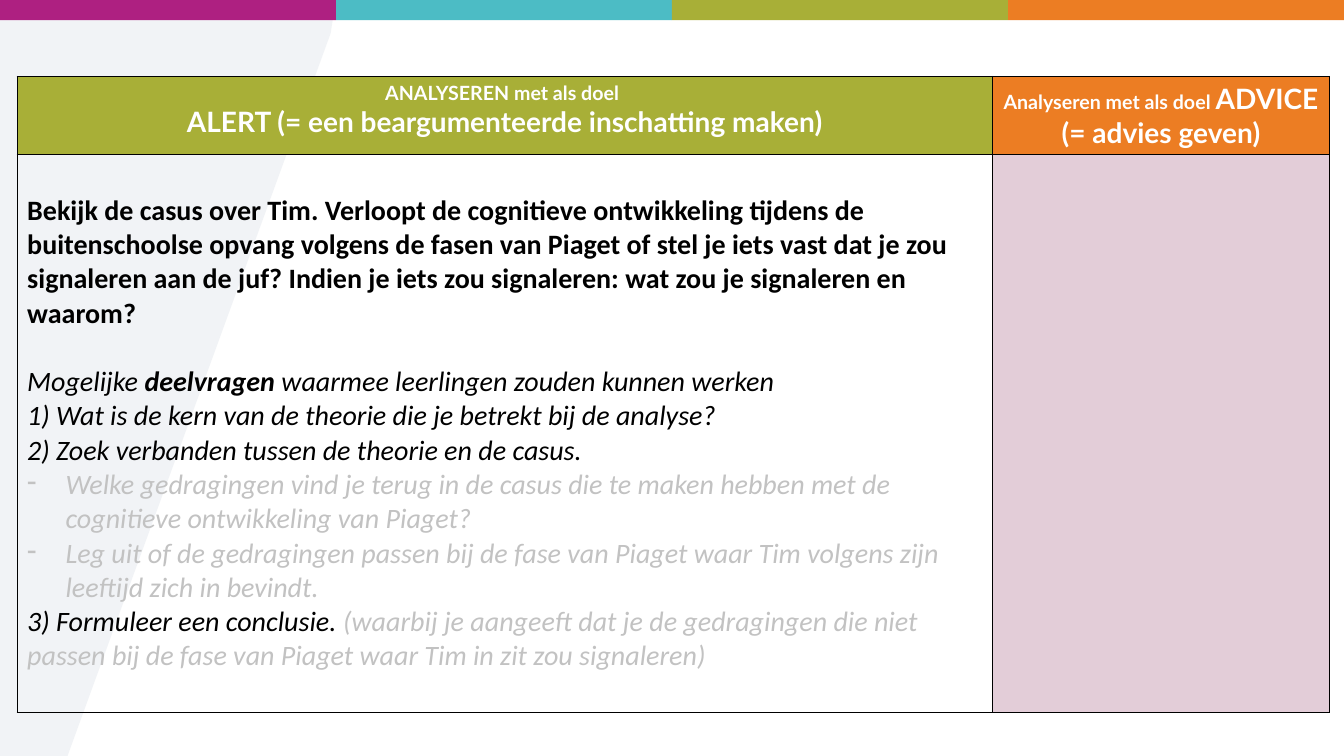
from lxml import etree
from pptx import Presentation
from pptx.dml.color import RGBColor
from pptx.enum.text import PP_ALIGN
from pptx.oxml.ns import qn
from pptx.util import Inches, Pt

CENTER = PP_ALIGN.CENTER
PINK, TEAL, GREEN, ORANGE = "AE2081", "4CBCC5", "A8AF37", "EC7D23"
GREY, BLACK, WHITE, ROSE = "C2C2C2", "000000", "FFFFFF", "E3CDD8"


def paint(fill, color):
    fill.solid()
    fill.fore_color.rgb = RGBColor.from_string(color)


prs = Presentation()
prs.slide_width, prs.slide_height = Inches(13.33), Inches(7.5)
slide = prs.slides.add_slide(prs.slide_layouts[6])
shapes = slide.shapes

# Pale slanted panel
edge = [(3.28, 0.33), (3.3, 0.2), (3.25, 0.1), (3.09, 0.05), (0, 0.05), (0, 7.5)]
pen = shapes.build_freeform(Inches(0.67), Inches(7.5))
pen.add_line_segments([(Inches(x), Inches(y)) for x, y in edge], close=True)
panel = pen.convert_to_shape()
panel.shadow.inherit = False
paint(panel.fill, "E8ECF0")
panel.line.fill.background()
tint = panel.fill._xPr.find(qn("a:solidFill"))[0]
etree.SubElement(tint, qn("a:alpha"), val="59000")

# Four colour bars along the top
bar_w = prs.slide_width // 4
for i, color in enumerate((PINK, TEAL, GREEN, ORANGE)):
    bar = shapes.add_shape(1, i * bar_w, 0, bar_w, Inches(0.2))
    bar.shadow.inherit = False
    paint(bar.fill, color)
    bar.line.fill.background()

# Table grid
table = shapes.add_table(2, 2, Inches(0.17), Inches(0.76),
                         Inches(13.02), Inches(6.31)).table
table.first_row = table.horz_banding = False
for col, width in zip(table.columns, (9.67, 3.35)):
    col.width = Inches(width)
for row, height in zip(table.rows, (0.77, 5.54)):
    row.height = Inches(height)
for cell, color in zip(table.iter_cells(), (GREEN, ORANGE, None, ROSE)):
    props = cell._tc.get_or_add_tcPr()
    for side in ("lnL", "lnR", "lnT", "lnB"):
        line = etree.SubElement(props, qn("a:" + side), w="12700")
        ink = etree.SubElement(line, qn("a:solidFill"))
        etree.SubElement(ink, qn("a:srgbClr"), val=BLACK)
    if color:
        paint(cell.fill, color)
    else:
        cell.fill.background()

# Headings: small lead-in, large goal
heads = [
    ("ANALYSEREN met als doel \v", "ALERT (= een beargumenteerde inschatting maken)"),
    ("Analyseren met als doel ", "ADVICE (= advies geven)"),
]
for col, parts in enumerate(heads):
    para = table.cell(0, col).text_frame.paragraphs[0]
    para.alignment = CENTER
    para.font.name, para.font.bold = "Lato", True
    para.font.color.rgb = RGBColor.from_string(WHITE)
    for text, size in zip(parts, (14, 20)):
        lead, *rest = text.split("\v")
        run = para.add_run()
        run.text = lead
        run.font.size = Pt(size)
        if rest:
            para.add_line_break()

# Body: gap before in points, dash, runs of (text, colour, bold)
body = [
    (0, False, [("Bekijk de casus over Tim. Verloopt de cognitieve ontwikkeling tijdens de "
                 "buitenschoolse opvang volgens de fasen van Piaget of stel je iets vast dat je "
                 "zou signaleren aan de juf? Indien je iets zou signaleren: wat zou je "
                 "signaleren en waarom?", BLACK, True)]),
    (24.4, False, [("Mogelijke ", BLACK, False), ("deelvragen ", BLACK, True),
                   ("waarmee leerlingen zouden kunnen werken", BLACK, False)]),
    (0, False, [("1) Wat is de kern van de theorie die je betrekt bij de analyse?", BLACK, False)]),
    (0, False, [("2) Zoek verbanden tussen de theorie en de casus.", BLACK, False)]),
    (0, True, [("Welke gedragingen vind je terug in de casus die te maken hebben met de "
                "cognitieve ontwikkeling van Piaget?", GREY, False)]),
    (0, True, [("Leg uit of de gedragingen passen bij de fase van Piaget waar Tim volgens "
                "zijn leeftijd zich in bevindt.", GREY, False)]),
    (0, False, [("3) Formuleer een conclusie. ", BLACK, False),
                ("(waarbij je aangeeft dat je de gedragingen die niet passen bij de fase van "
                 "Piaget waar Tim in zit zou signaleren)", GREY, False)]),
]
cell = table.cell(1, 0)
cell.margin_top = Inches(0.39)
frame = cell.text_frame
for i, (gap, dash, runs) in enumerate(body):
    para = frame.add_paragraph() if i else frame.paragraphs[0]
    if gap:
        para.space_before = Pt(gap)
    if dash:
        props = para._p.get_or_add_pPr()
        props.set("marL", str(Inches(0.38)))
        props.set("indent", str(-Inches(0.38)))
        etree.SubElement(props, qn("a:buChar"), char="-")
    para.font.name, para.font.size = "Calibri", Pt(20)
    para.font.italic = i > 0
    for text, color, bold in runs:
        run = para.add_run()
        run.text = text
        run.font.bold = bold
        run.font.color.rgb = RGBColor.from_string(color)

prs.save("out.pptx")
